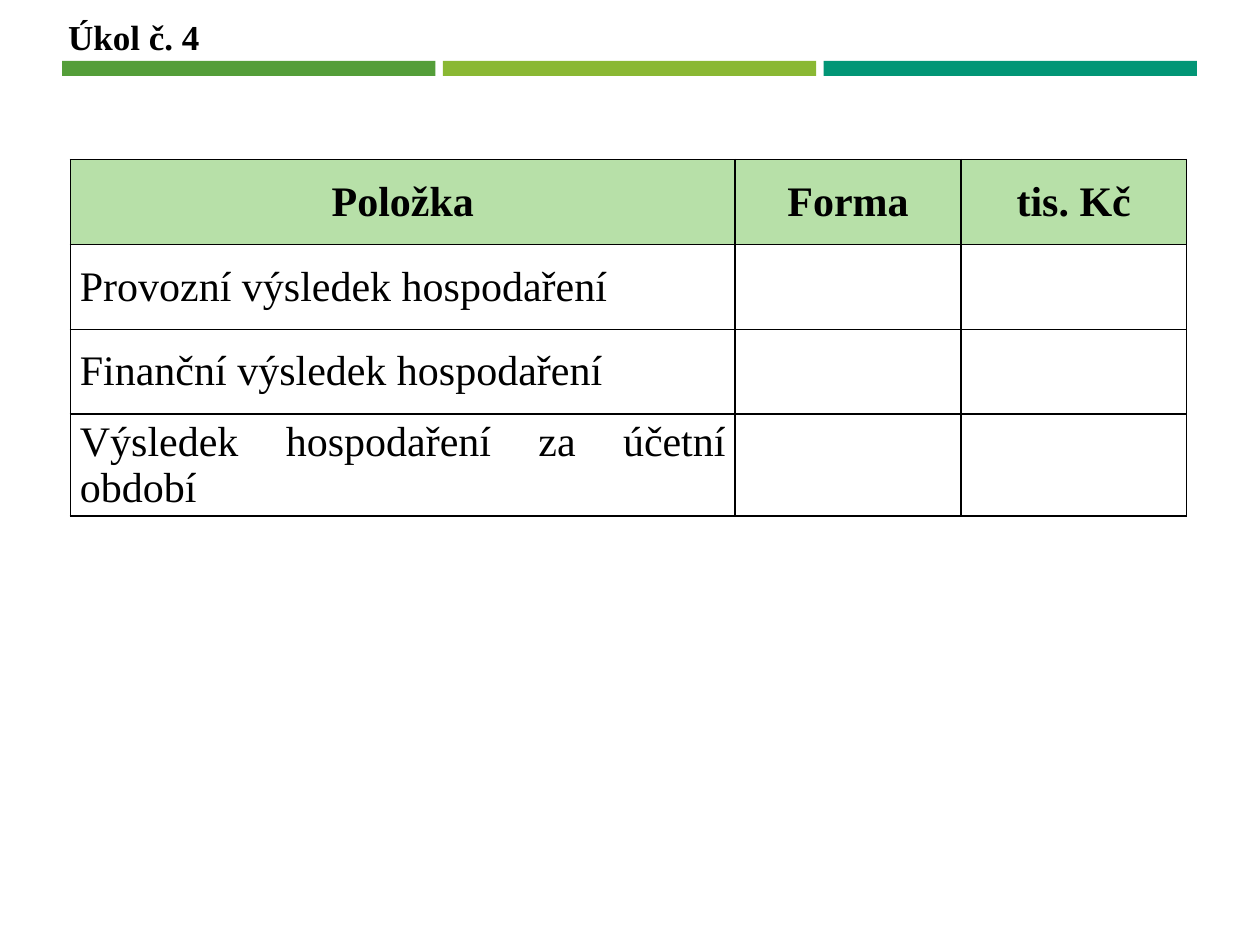
import pptx
import pptx.util
import pptx.dml.color
import pptx.enum.shapes
import pptx.enum.text
import lxml.etree

Cm, Pt = pptx.util.Cm, pptx.util.Pt
Align = pptx.enum.text.PP_ALIGN
Anchor = pptx.enum.text.MSO_ANCHOR

FONT = "Times New Roman"
HUES = {
    "text": "000000",
    "line": "000000",
    "head": "B7E0A8",
    "leaf": "549E39",
    "lime": "8AB833",
    "teal": "029676",
}
ROWS = [
    ("Položka", "Forma", "tis. Kč"),
    ("Provozní výsledek hospodaření", "", ""),
    ("Finanční výsledek hospodaření", "", ""),
    ("Výsledek hospodaření za účetní období", "", ""),
]


def color(name):
    return pptx.dml.color.RGBColor.from_string(HUES[name])


def style(par, size, bold, align):
    par.alignment = align
    for run in par.runs:
        run.font.name = FONT
        run.font.size = Pt(size)
        run.font.bold = bold
        run.font.color.rgb = color("text")


def add_bars(slide, left, top, width, height):
    names = ("leaf", "lime", "teal")
    gap = 0.15
    each = (width - gap * (len(names) - 1)) / len(names)
    for i, name in enumerate(names):
        bar = slide.shapes.add_shape(
            pptx.enum.shapes.MSO_SHAPE.RECTANGLE,
            Cm(left + i * (each + gap)), Cm(top), Cm(each), Cm(height))
        bar.shadow.inherit = False
        bar.fill.solid()
        bar.fill.fore_color.rgb = color(name)
        bar.line.fill.background()


def set_title(slide, left, top, width, height):
    title = slide.shapes.title
    title.left, title.top = Cm(left), Cm(top)
    title.width, title.height = Cm(width), Cm(height)
    frame = title.text_frame
    frame.text = "Úkol č. 4"
    frame.word_wrap = False
    frame.auto_size = pptx.enum.text.MSO_AUTO_SIZE.NONE
    frame.vertical_anchor = Anchor.TOP
    style(frame.paragraphs[0], 20, True, Align.LEFT)


def add_edges(cell):
    """Draw a thin line on all four sides of the cell."""
    ns = "{http://schemas.openxmlformats.org/drawingml/2006/main}"
    props = cell._tc.get_or_add_tcPr()
    for side in ("lnL", "lnR", "lnT", "lnB"):
        edge = lxml.etree.SubElement(props, ns + side, w=str(Pt(1)))
        fill = lxml.etree.SubElement(edge, ns + "solidFill")
        lxml.etree.SubElement(fill, ns + "srgbClr", val=HUES["line"])


def add_grid(slide, left, top, width, height):
    grid = slide.shapes.add_table(
        len(ROWS), len(ROWS[0]), Cm(left), Cm(top), Cm(width), Cm(height)).table
    grid.horz_banding = False
    side = 4.55
    for col, size in zip(grid.columns, (width - 2 * side, side, side)):
        col.width = Cm(size)
    tall = 2.05
    for row in grid.rows:
        row.height = Cm((height - tall) / (len(ROWS) - 1))
    grid.rows[len(ROWS) - 1].height = Cm(tall)

    for r, texts in enumerate(ROWS):
        head = r == 0
        for c, text in enumerate(texts):
            cell = grid.cell(r, c)
            add_edges(cell)
            if head:
                cell.fill.solid()
                cell.fill.fore_color.rgb = color("head")
            else:
                cell.fill.background()
            cell.margin_left = cell.margin_right = Cm(0.19)
            cell.margin_top = cell.margin_bottom = 0
            cell.vertical_anchor = Anchor.MIDDLE
            par = cell.text_frame.paragraphs[0]
            if text:
                par.text = text
            style(par, 24, head, Align.CENTER if head else Align.JUSTIFY)


def main():
    deck = pptx.Presentation()
    deck.slide_width, deck.slide_height = Cm(25.4), Cm(19.05)
    slide = deck.slides.add_slide(deck.slide_layouts.get_by_name("Title Only"))
    add_bars(slide, 1.25, 1.23, 22.88, 0.3)
    set_title(slide, 1.12, 0.18, 3.18, 1.11)
    add_grid(slide, 1.42, 3.22, 22.5, 7.18)
    deck.save("out.pptx")


if __name__ == "__main__":
    main()
